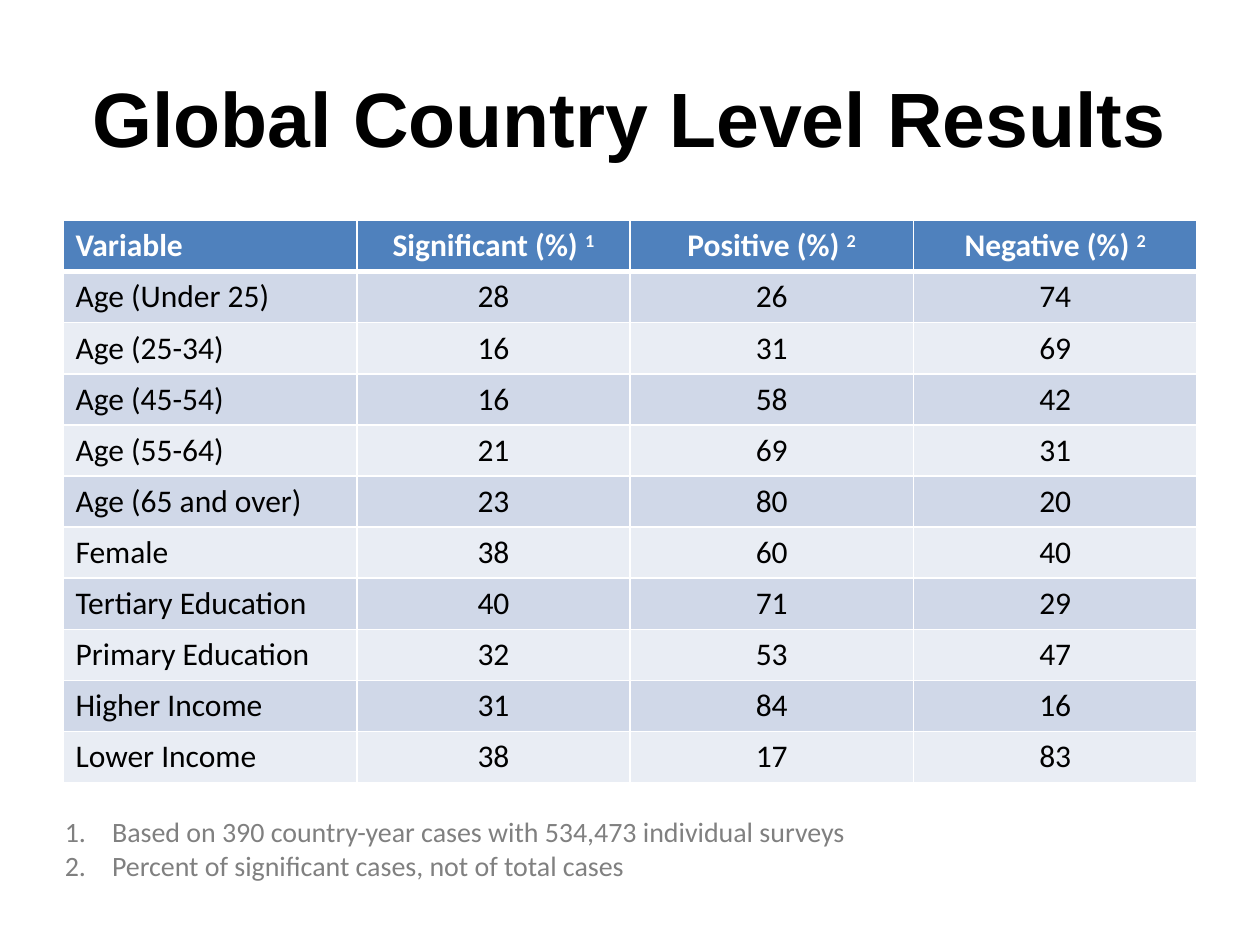
from lxml import etree
from pptx import Presentation
from pptx.dml.color import RGBColor
from pptx.enum import text as t
from pptx.oxml.ns import qn
from pptx.util import Pt

BLACK = RGBColor(0, 0, 0)
WHITE = RGBColor(255, 255, 255)
GRAY = RGBColor(0x80, 0x80, 0x80)
BLUE = RGBColor(0x4F, 0x81, 0xBD)
BANDS = RGBColor(0xE9, 0xED, 0xF4), RGBColor(0xD0, 0xD8, 0xE8)

HEADS = [("Variable", ""), ("Significant (%) ", "1"),
         ("Positive (%) ", "2"), ("Negative (%) ", "2")]
ROWS = [
    ("Age (Under 25)", 28, 26, 74),
    ("Age (25-34)", 16, 31, 69),
    ("Age (45-54)", 16, 58, 42),
    ("Age (55-64)", 21, 69, 31),
    ("Age (65 and over)", 23, 80, 20),
    ("Female", 38, 60, 40),
    ("Tertiary Education", 40, 71, 29),
    ("Primary Education", 32, 53, 47),
    ("Higher Income", 31, 84, 16),
    ("Lower Income", 38, 17, 83),
]
NOTES = ["Based on 390 country-year cases with 534,473 individual surveys",
         "Percent of significant cases, not of total cases"]


def write(par, words, size=18, font="Calibri", color=BLACK, bold=False,
          center=False, sup=False):
    """Add one formatted run to a paragraph."""
    par.alignment = t.PP_ALIGN.CENTER if center else t.PP_ALIGN.LEFT
    run = par.add_run()
    run.text = words
    run.font.size = Pt(size)
    run.font.name = font
    run.font.bold = bold
    run.font.color.rgb = color
    if sup:
        run.font._element.set("baseline", "30000")


def frame(slide, box, anchor):
    """Add a wrapping text box and return its text frame."""
    body = slide.shapes.add_textbox(*map(Pt, box)).text_frame
    body.word_wrap = True
    body.vertical_anchor = anchor
    return body


def edge(cell, side, width):
    """Draw one white border of a cell."""
    line = etree.SubElement(cell._tc.get_or_add_tcPr(), qn("a:ln" + side),
                            w=str(Pt(width)))
    fill = etree.SubElement(line, qn("a:solidFill"))
    etree.SubElement(fill, qn("a:srgbClr"), val=str(WHITE))


def title(slide, box):
    body = frame(slide, box, t.MSO_ANCHOR.MIDDLE)
    write(body.paragraphs[0], "Global Country Level Results", size=44,
          font="Arial", bold=True, center=True)


def results(slide, box, widths):
    grid = slide.shapes.add_table(len(ROWS) + 1, len(HEADS),
                                  *map(Pt, box)).table
    for col, width in zip(grid.columns, widths):
        col.width = Pt(width)
    for row in grid.rows:
        row.height = Pt(box[3] / len(grid.rows))

    for r, row in enumerate([HEADS, *ROWS]):
        for c, value in enumerate(row):
            cell = grid.cell(r, c)
            # Borders, with a thick rule under the header
            for side in "LRTB":
                thick = (r, side) in ((0, "B"), (1, "T"))
                edge(cell, side, 3 if thick else 1)
            cell.fill.solid()
            cell.fill.fore_color.rgb = BANDS[r % 2] if r else BLUE
            par = cell.text_frame.paragraphs[0]
            if r:
                write(par, str(value), center=c > 0)
                continue
            # Header label with its note mark
            label, mark = value
            style = dict(color=WHITE, bold=True, center=c > 0)
            write(par, label, **style)
            if mark:
                write(par, mark, sup=True, **style)


def notes(slide, box):
    body = frame(slide, box, t.MSO_ANCHOR.TOP)
    for i, words in enumerate(NOTES):
        par = body.add_paragraph() if i else body.paragraphs[0]
        write(par, words, size=16, color=GRAY)
        # Numbered list with a hanging indent
        props = par._p.get_or_add_pPr()
        props.set("marL", str(Pt(27)))
        props.set("indent", str(-Pt(27)))
        etree.SubElement(props, qn("a:buFont"), typeface="+mj-lt")
        etree.SubElement(props, qn("a:buAutoNum"), type="arabicPeriod")


def main():
    deck = Presentation()
    deck.slide_width, deck.slide_height = Pt(720), Pt(540)
    slide = deck.slides.add_slide(deck.slide_layouts[6])
    title(slide, (36, 21.6, 648, 90))
    results(slide, (36, 126, 648, 321.2), (168, 156, 162, 162))
    notes(slide, (30, 462, 654, 46))
    deck.save("out.pptx")


if __name__ == "__main__":
    main()
